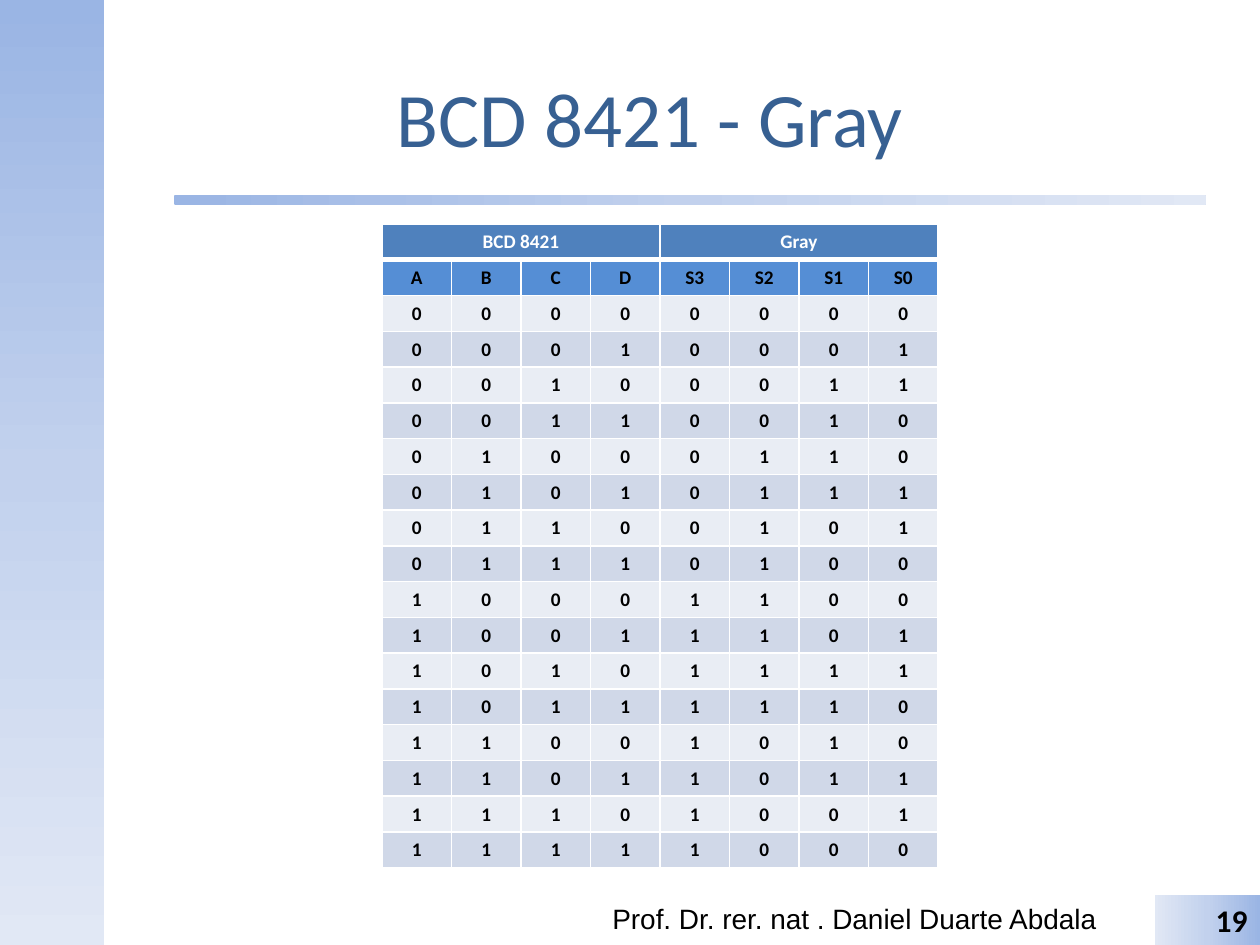
import copy

import pptx
import pptx.dml.color
import pptx.enum.shapes
import pptx.enum.text
import pptx.oxml
import pptx.oxml.ns
import pptx.util

RGB = pptx.dml.color.RGBColor
SHAPE = pptx.enum.shapes.MSO_SHAPE
ALIGN = pptx.enum.text.PP_ALIGN
MIDDLE = pptx.enum.text.MSO_ANCHOR.MIDDLE
PX = 914400 // 126

BLACK = RGB(0x00, 0x00, 0x00)
WHITE = RGB(0xFF, 0xFF, 0xFF)
TITLE_BLUE = RGB(0x37, 0x60, 0x92)
HEAD_BLUE = RGB(0x4F, 0x81, 0xBD)
NAME_BLUE = RGB(0x55, 0x8E, 0xD5)
ROW_LIGHT = RGB(0xE9, 0xED, 0xF4)
ROW_DARK = RGB(0xD0, 0xD8, 0xE8)
FADE = [RGB(0x9A, 0xB5, 0xE4), RGB(0xC2, 0xD1, 0xED), RGB(0xE1, 0xE8, 0xF5)]


def emu(*lengths):
    """Turn px lengths into EMU."""
    return [pptx.util.Emu(round(n * PX)) for n in lengths]


def write(tf, text, size=11, font="Calibri", color=BLACK, bold=False, align=ALIGN.CENTER):
    """Put one formatted run into a text frame."""
    p = tf.paragraphs[0]
    p.alignment = align
    r = p.add_run()
    r.text = text
    r.font.size = pptx.util.Pt(size)
    r.font.name = font
    r.font.bold = bold
    r.font.color.rgb = color


def add_fade(s, kind, box, angle):
    """Add a shape with the three-stop blue gradient at a counter-clockwise angle."""
    sp = s.shapes.add_shape(kind, *emu(*box))
    sp.shadow.inherit = False
    sp.line.fill.background()
    sp.fill.gradient()
    sp.fill.gradient_angle = angle
    stops = sp._element.spPr.find(".//" + pptx.oxml.ns.qn("a:gsLst"))
    stops.insert(1, copy.deepcopy(stops[0]))
    for i, (stop, color) in enumerate(zip(sp.fill.gradient_stops, FADE)):
        stop.position = i / 2
        stop.color.rgb = color
    return sp


def set_borders(cell, **widths):
    """Draw white cell borders, 1 pt unless a side is given."""
    tcPr = cell._tc.get_or_add_tcPr()
    for i, side in enumerate("LRTB"):
        width = pptx.util.Pt(widths.get(side, 1))
        tcPr.insert(i, pptx.oxml.parse_xml(
            f'<a:ln{side} {pptx.oxml.ns.nsdecls("a")} w="{width}">'
            f'<a:solidFill><a:srgbClr val="{WHITE}"/></a:solidFill></a:ln{side}>'))


def add_title(s, box, text):
    """Place the slide title in its placeholder."""
    sp = s.shapes.title
    sp.left, sp.top, sp.width, sp.height = emu(*box)
    sp.text_frame.vertical_anchor = MIDDLE
    write(sp.text_frame, text, size=44, color=TITLE_BLUE)


def add_code_table(s, box):
    """Add the table of 4-bit binary values and their Gray codes."""
    rows = [["BCD 8421", "", "", "", "Gray", "", "", ""],
            ["A", "B", "C", "D", "S3", "S2", "S1", "S0"]]
    rows += [list(f"{n:04b}{n ^ n >> 1:04b}") for n in range(16)]
    left, top, width, height = emu(*box)
    table = s.shapes.add_table(len(rows), 8, left, top, width, height).table
    for col in table.columns:
        col.width = width // 8
    for i, values in enumerate(rows):
        table.rows[i].height = height // len(rows)
        fill = [HEAD_BLUE, NAME_BLUE][i] if i < 2 else [ROW_LIGHT, ROW_DARK][i % 2]
        for j, value in enumerate(values):
            cell = table.cell(i, j)
            cell.fill.solid()
            cell.fill.fore_color.rgb = fill
            set_borders(cell, B=1 if i else 3, T=3 if i == 1 else 1)
            if value:
                write(cell.text_frame, value, color=BLACK if i else WHITE, bold=True)
    for j in (0, 4):
        table.cell(0, j).merge(table.cell(0, j + 3))


def add_footer(s, box, author, number):
    """Place the author line and the page number tab in the footer box."""
    left, top, width, height = box
    tab = 105
    tb = s.shapes.add_textbox(*emu(left, top, 528, height))
    tb.text_frame.word_wrap = True
    write(tb.text_frame, author, size=16, font="Arial", align=ALIGN.LEFT)
    sp = add_fade(s, SHAPE.RECTANGLE, (left + width - tab, top, tab, height), 180)
    sp.text_frame.vertical_anchor = MIDDLE
    write(sp.text_frame, number, size=18, bold=True, align=ALIGN.RIGHT)


def main():
    """Build the slide and save it."""
    prs = pptx.Presentation()
    prs.slide_width, prs.slide_height = emu(1260, 945)
    s = prs.slides.add_slide(prs.slide_layouts[5])
    add_fade(s, SHAPE.RECTANGLE, (0, 0, 104, 945), 270)
    add_fade(s, SHAPE.ROUNDED_RECTANGLE, (174, 195, 1032, 10), 0)
    add_title(s, (104, 38, 1092, 157), "BCD 8421 - Gray")
    add_footer(s, (600, 895, 660, 50), "Prof. Dr. rer. nat . Daniel Duarte Abdala", "19")
    add_code_table(s, (382, 224, 556, 643))
    prs.save("out.pptx")


if __name__ == "__main__":
    main()
